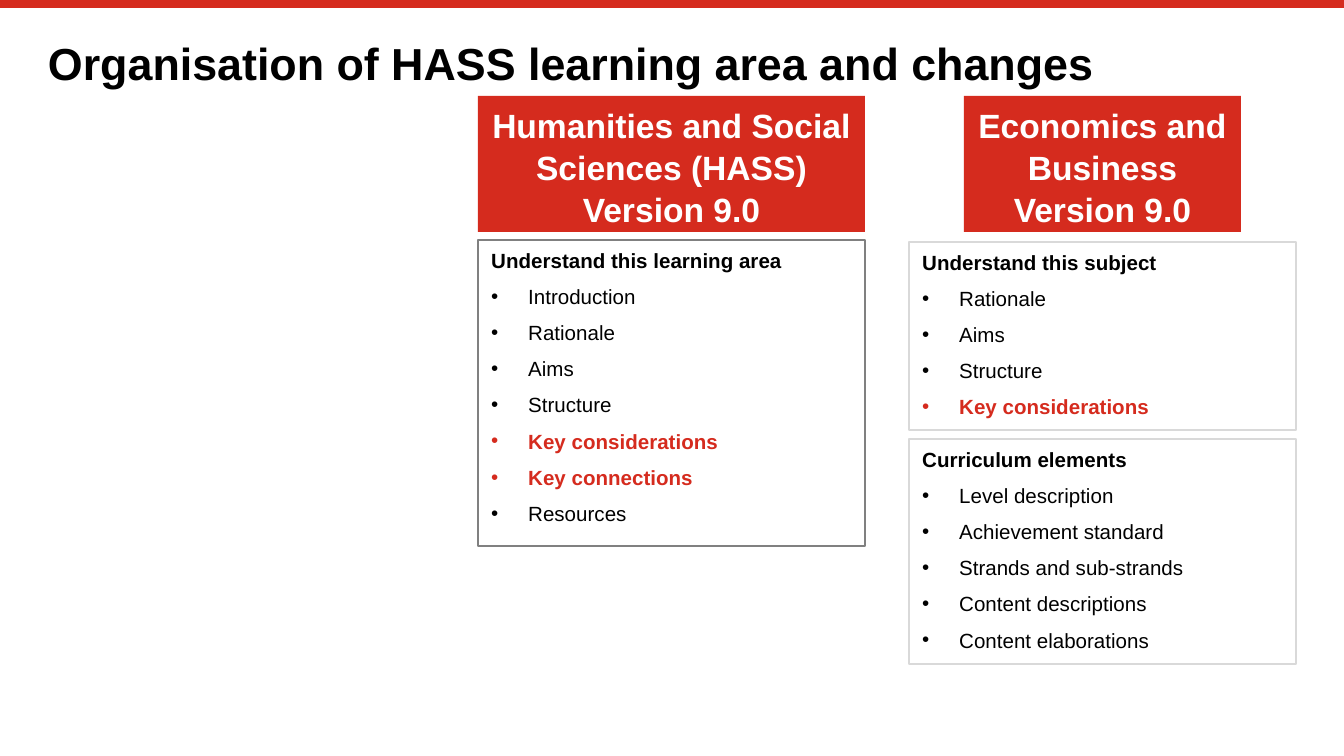
import pptx
import pptx.dml.color
import pptx.enum.shapes
import pptx.enum.text
import pptx.oxml
import pptx.oxml.ns
import pptx.util

EMU_PER_PX = 914400 / 134.4
COLORS = {"red": "D52B1E", "black": "000000", "white": "FFFFFF",
          "light": "D9D9D9", "grey": "808080"}


def px(value):
    return pptx.util.Emu(round(value * EMU_PER_PX))


def rgb(name):
    return pptx.dml.color.RGBColor.from_string(COLORS[name])


class SlideBuilder:
    font_name = "Arial"
    line_spacing = 1.05
    item_gap = pptx.util.Pt(5.5)
    indent = 37

    def __init__(self, slide):
        self.slide = slide

    def style(self, paragraph, size, color, bold):
        for run in paragraph.runs:
            run.font.name = self.font_name
            run.font.size = pptx.util.Pt(size)
            run.font.bold = bold
            run.font.color.rgb = rgb(color)

    def bullet(self, paragraph):
        properties = paragraph._p.get_or_add_pPr()
        properties.set("marL", str(px(self.indent)))
        properties.set("indent", str(-px(self.indent)))
        for tag, attribute, value in (("a:buFont", "typeface", self.font_name),
                                      ("a:buChar", "char", "•")):
            element = pptx.oxml.parse_xml(f'<{tag} {pptx.oxml.ns.nsdecls("a")} {attribute}="{value}"/>')
            properties.append(element)

    def top_rule(self):
        connector = self.slide.shapes.add_connector(
            pptx.enum.shapes.MSO_CONNECTOR.STRAIGHT, px(0), px(4), px(1344), px(4))
        connector.line.color.rgb = rgb("red")
        connector.line.width = pptx.util.Pt(4.2)
        effects = pptx.oxml.parse_xml(f'<a:effectLst {pptx.oxml.ns.nsdecls("a")}/>')
        connector._element.spPr.append(effects)

    def title(self, text, left, top, width, height):
        box = self.slide.shapes.add_textbox(px(left), px(top), px(width), px(height))
        frame = box.text_frame
        frame.word_wrap = True
        frame.margin_left = frame.margin_right = 0
        frame.margin_top = frame.margin_bottom = 0
        frame.vertical_anchor = pptx.enum.text.MSO_ANCHOR.MIDDLE
        frame.text = text
        frame.paragraphs[0].line_spacing = 0.9
        self.style(frame.paragraphs[0], 24, "black", True)

    def rectangle(self, lines, left, top, width, height, fill=None, outline=None):
        shape = self.slide.shapes.add_shape(
            pptx.enum.shapes.MSO_SHAPE.RECTANGLE, px(left), px(top), px(width), px(height))
        shape.shadow.inherit = False
        if fill:
            shape.fill.solid()
            shape.fill.fore_color.rgb = rgb(fill)
        else:
            shape.fill.background()
        if outline:
            shape.line.color.rgb = rgb(outline)
            shape.line.width = pptx.util.Pt(1)
        else:
            shape.line.fill.background()
        frame = shape.text_frame
        frame.word_wrap = True
        frame.vertical_anchor = pptx.enum.text.MSO_ANCHOR.TOP
        frame.text = "\n".join(lines)
        for paragraph in frame.paragraphs:
            paragraph.line_spacing = self.line_spacing
        return frame.paragraphs

    def header(self, subject, left, width):
        lines = [subject, "Version 9.0"]
        for paragraph in self.rectangle(lines, left, 96, width, 136, fill="red"):
            paragraph.alignment = pptx.enum.text.PP_ALIGN.CENTER
            self.style(paragraph, 18, "white", True)

    def panel(self, heading, items, left, top, height, outline):
        paragraphs = self.rectangle([heading, *items], left, top, 387, height, outline=outline)
        for index, paragraph in enumerate(paragraphs):
            paragraph.alignment = pptx.enum.text.PP_ALIGN.LEFT
            changed = paragraph.text.startswith("Key")
            if index:
                paragraph.space_before = self.item_gap
                self.bullet(paragraph)
            self.style(paragraph, 11, "red" if changed else "black", changed or index == 0)


def main():
    presentation = pptx.Presentation()
    presentation.slide_width = px(1344)
    presentation.slide_height = px(756)
    builder = SlideBuilder(presentation.slides.add_slide(presentation.slide_layouts[6]))

    builder.top_rule()
    builder.title("Organisation of HASS learning area and changes", 48, 40, 1249, 52)

    builder.header("Humanities and Social Sciences (HASS)", 478, 387)
    builder.panel("Understand this learning area",
                  ["Introduction", "Rationale", "Aims", "Structure",
                   "Key considerations", "Key connections", "Resources"],
                  478, 240, 306, "grey")

    builder.header("Economics and Business", 964, 277)
    builder.panel("Understand this subject",
                  ["Rationale", "Aims", "Structure", "Key considerations"],
                  909, 242, 188, "light")
    builder.panel("Curriculum elements",
                  ["Level description", "Achievement standard", "Strands and sub-strands",
                   "Content descriptions", "Content elaborations"],
                  909, 439, 225, "light")

    presentation.save("out.pptx")


if __name__ == "__main__":
    main()
